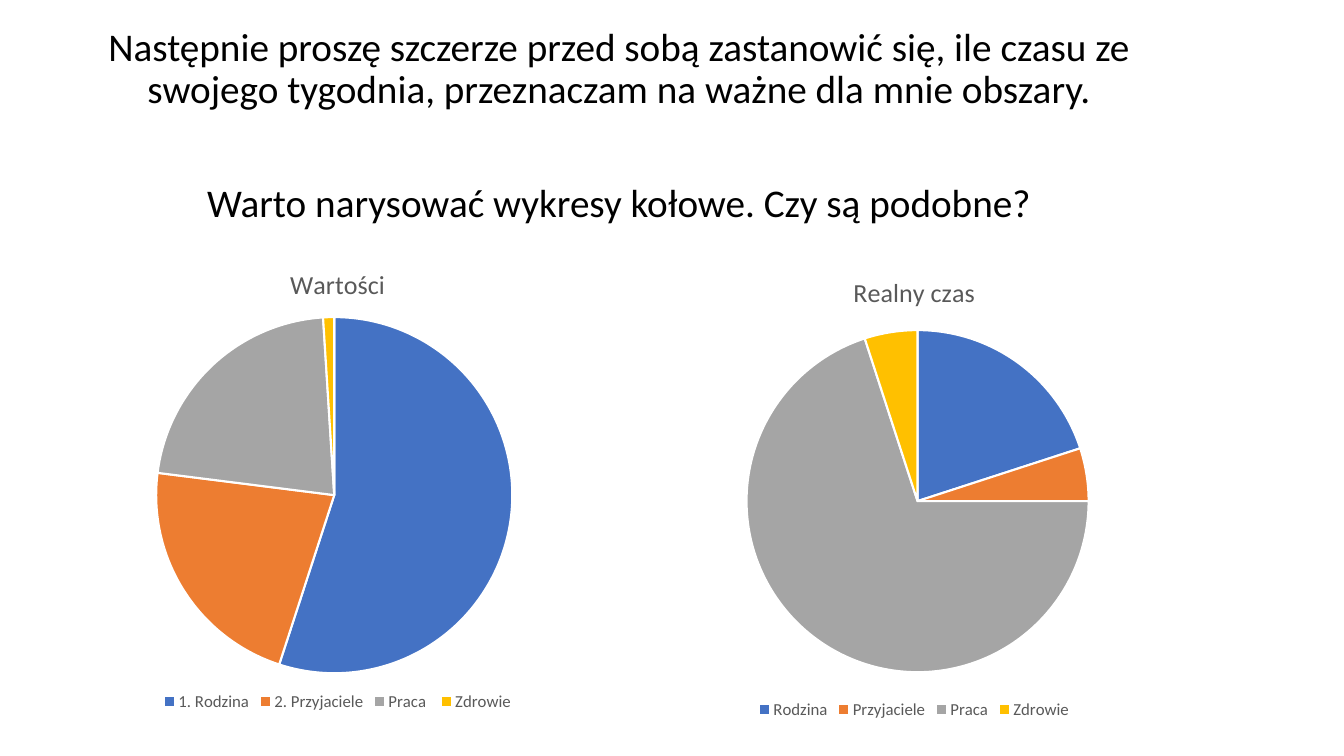
from dataclasses import dataclass

from lxml.etree import SubElement
from pptx import Presentation
from pptx.chart.data import CategoryChartData
from pptx.dml.color import RGBColor
from pptx.enum.chart import XL_CHART_TYPE, XL_LEGEND_POSITION
from pptx.enum.text import PP_ALIGN
from pptx.oxml.ns import qn
from pptx.util import Cm, Pt


@dataclass(frozen=True)
class Theme:
    face: str = "Calibri"
    ink: str = "000000"
    grey: str = "595959"
    white: str = "FFFFFF"
    slices: tuple = ("4472C4", "ED7D31", "A5A5A5", "FFC000")
    body: float = 28
    title: float = 18.6
    legend: float = 12


THEME = Theme()


def style(font, size, color):
    font.name = THEME.face
    font.size = Pt(size)
    font.bold = False
    font.color.rgb = RGBColor.from_string(color)


def add_text(slide, box, lines, gaps):
    frame = slide.shapes.add_textbox(*map(Cm, box)).text_frame
    frame.word_wrap = True
    frame.text = "\n".join(lines)
    for para, gap in zip(frame.paragraphs, gaps):
        para.alignment = PP_ALIGN.CENTER
        para.line_spacing = 0.9
        para.space_before = Pt(gap)
        style(para.runs[0].font, THEME.body, THEME.ink)


def place_plot(chart, area):
    plot = chart._chartSpace.chart.plotArea
    for old in plot.findall(qn("c:layout")):
        plot.remove(old)
    layout = SubElement(plot, qn("c:layout"))
    plot.insert(0, layout)
    manual = SubElement(layout, qn("c:manualLayout"))
    rules = [("layoutTarget", "inner"), ("xMode", "edge"), ("yMode", "edge")]
    for tag, value in rules + list(zip("xywh", area)):
        SubElement(manual, qn(f"c:{tag}")).set("val", str(value))


def add_pie(slide, box, title, labels, values, area):
    data = CategoryChartData()
    data.categories = labels
    data.add_series(title, values)
    chart = slide.shapes.add_chart(XL_CHART_TYPE.PIE, *map(Cm, box), data).chart
    style(chart.font, THEME.legend, THEME.grey)

    chart.has_title = True
    head = chart.chart_title
    head.include_in_layout = False
    head.text_frame.text = title
    style(head.text_frame.paragraphs[0].runs[0].font, THEME.title, THEME.grey)

    chart.has_legend = True
    chart.legend.position = XL_LEGEND_POSITION.BOTTOM
    chart.legend.include_in_layout = False
    style(chart.legend.font, THEME.legend, THEME.grey)

    plot = chart.plots[0]
    plot.vary_by_categories = True
    for index, color in enumerate(THEME.slices):
        part = plot.series[0].points[index].format
        part.fill.solid()
        part.fill.fore_color.rgb = RGBColor.from_string(color)
        part.line.color.rgb = RGBColor.from_string(THEME.white)
        part.line.width = Pt(1.5)
    place_plot(chart, area)


def main():
    deck = Presentation()
    deck.slide_width, deck.slide_height = Cm(33.87), Cm(19.05)
    slide = deck.slides.add_slide(deck.slide_layouts[6])
    add_pie(slide, (0, 6.22, 17.02, 11.81), "Wartości",
            ["1. Rodzina", "2. Przyjaciele", "Praca ", "Zdrowie"],
            [55, 22, 22, 1], (0.23, 0.15, 0.53, 0.76))
    add_text(slide, (0.99, 0.56, 29.21, 16.15),
             ["Następnie proszę szczerze przed sobą zastanowić się, ile czasu ze "
              "swojego tygodnia, przeznaczam na ważne dla mnie obszary.",
              "Warto narysować wykresy kołowe. Czy są podobne?"], (0, 51))
    add_pie(slide, (14.53, 6.43, 17.02, 11.81), "Realny czas",
            ["Rodzina", "Przyjaciele", "Praca", "Zdrowie"],
            [20, 5, 70, 5], (0.25, 0.16, 0.51, 0.73))
    deck.save("out.pptx")


if __name__ == "__main__":
    main()
